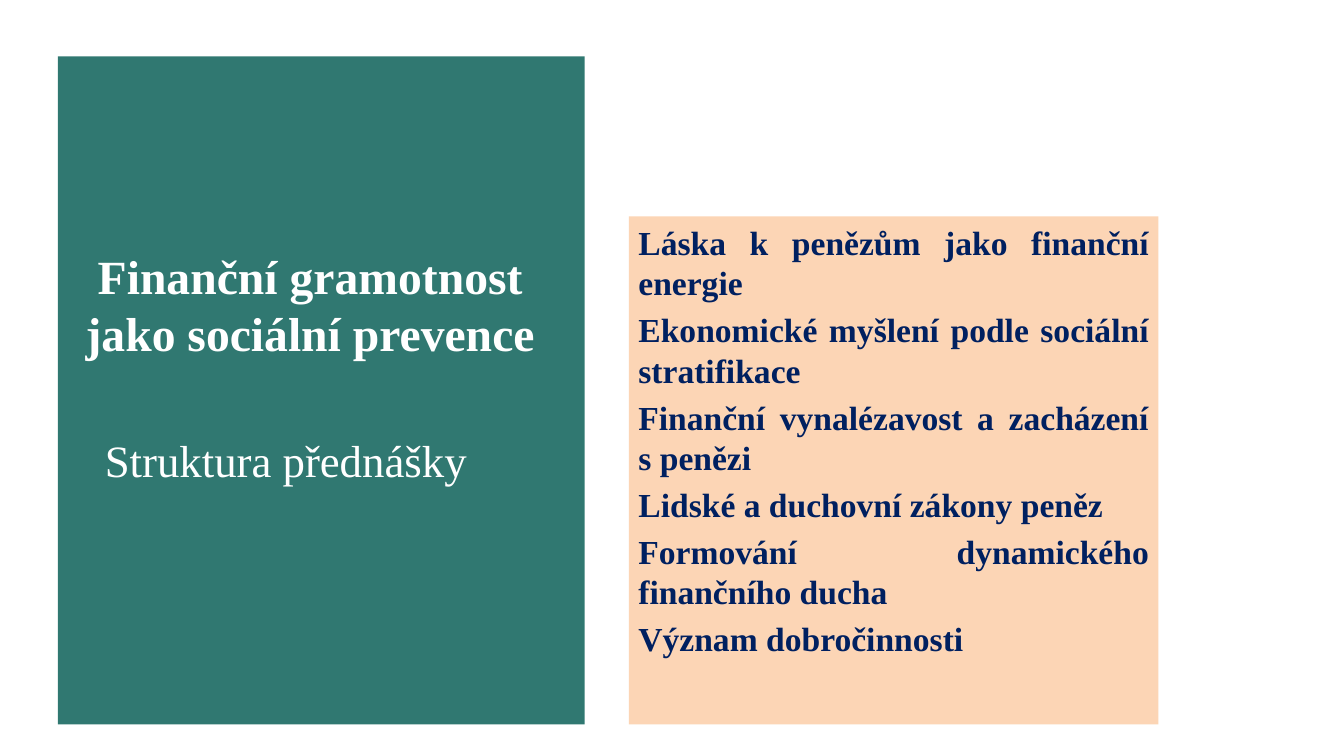
from dataclasses import dataclass

import pptx
import pptx.dml.color
import pptx.enum.shapes
import pptx.enum.text
import pptx.oxml.ns
import pptx.util
from lxml import etree

Inches = pptx.util.Inches
Pt = pptx.util.Pt
Align = pptx.enum.text.PP_ALIGN
Anchor = pptx.enum.text.MSO_ANCHOR

FONT = "Times New Roman"
TEAL, PEACH, NAVY, WHITE = "307871", "FCD5B5", "002060", "FFFFFF"
TOPICS = [
    "Láska k penězům jako finanční energie",
    "Ekonomické myšlení podle sociální stratifikace",
    "Finanční vynalézavost a zacházení s penězi",
    "Lidské a duchovní zákony peněz",
    "Formování dynamického finančního ducha",
    "Význam dobročinnosti",
]


@dataclass(frozen=True)
class Area:
    left: float
    top: float
    width: float
    height: float

    def lengths(self) -> list:
        return [Inches(n) for n in (self.left, self.top, self.width, self.height)]


PANEL = Area(0.43, 0.42, 3.92, 4.97)
TITLE = Area(0.55, 0.96, 3.52, 1.87)
SUBTITLE = Area(0.71, 3.18, 2.96, 0.48)
LIST = Area(4.68, 1.61, 3.94, 3.78)


def paint(target, color: str) -> None:
    target.fill.solid()
    target.fill.fore_color.rgb = pptx.dml.color.RGBColor.from_string(color)


def place(box, area: Area) -> None:
    box.left, box.top, box.width, box.height = area.lengths()


def write(box, lines: list[str], *, size: float, color: str, bold: bool = False,
          align=Align.LEFT, anchor=Anchor.TOP, gap: float = 0,
          bottom: float = 0.04) -> None:
    """Fill a box with one unbulleted paragraph per line."""
    frame = box.text_frame
    frame.word_wrap = True
    frame.auto_size = pptx.enum.text.MSO_AUTO_SIZE.NONE
    frame.vertical_anchor = anchor
    frame.margin_left = frame.margin_right = Inches(0.07)
    frame.margin_top, frame.margin_bottom = Inches(0.04), Inches(bottom)
    for index, line in enumerate(lines):
        para = frame.add_paragraph() if index else frame.paragraphs[0]
        para.alignment = align
        para.space_before = Pt(gap if index else 0)
        properties = para._p.get_or_add_pPr()
        properties.set("marL", "0")
        properties.set("indent", "0")
        etree.SubElement(properties, pptx.oxml.ns.qn("a:buNone"))
        span = para.add_run()
        span.text = line
        span.font.name, span.font.size, span.font.bold = FONT, Pt(size), bold
        span.font.color.rgb = pptx.dml.color.RGBColor.from_string(color)


def main() -> None:
    deck = pptx.Presentation()
    deck.slide_width, deck.slide_height = Inches(10), Inches(10 * 9 / 16)
    page = deck.slides.add_slide(deck.slide_layouts[1])

    panel = page.shapes.add_shape(
        pptx.enum.shapes.MSO_SHAPE.RECTANGLE, *PANEL.lengths())
    panel.shadow.inherit = False
    paint(panel, TEAL)
    panel.line.fill.background()
    page.shapes.title.element.addprevious(panel.element)

    title = page.shapes.title
    place(title, TITLE)
    write(title, ["Finanční gramotnost jako sociální prevence"], size=25.5,
          color=WHITE, bold=True, align=Align.CENTER, anchor=Anchor.BOTTOM,
          bottom=0.14)

    topics = page.placeholders[1]
    place(topics, LIST)
    paint(topics, PEACH)
    write(topics, TOPICS, size=18, color=NAVY, bold=True, align=Align.JUSTIFY,
          gap=3.6)

    subtitle = page.shapes.add_textbox(*SUBTITLE.lengths())
    write(subtitle, ["Struktura přednášky"], size=24, color=WHITE)

    deck.save("out.pptx")


if __name__ == "__main__":
    main()
